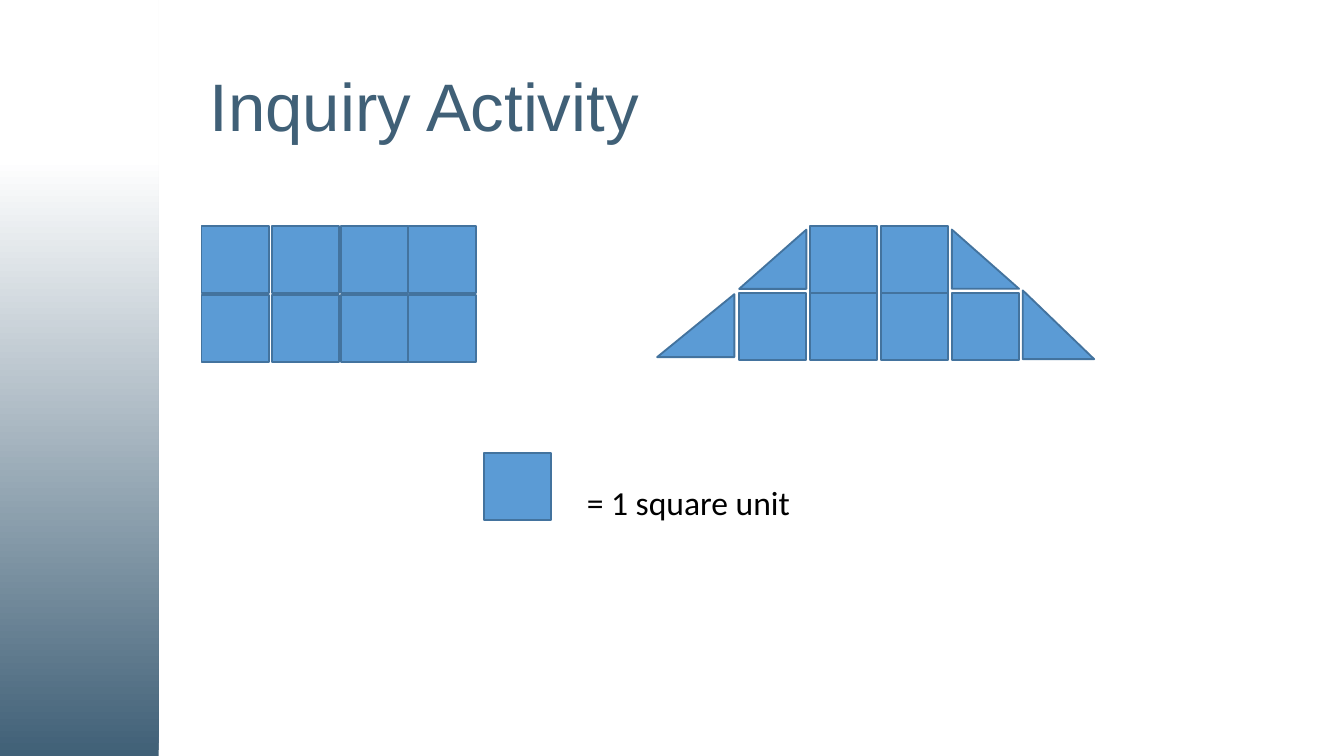
from pptx import Presentation
from pptx.dml.color import RGBColor
from pptx.enum.shapes import MSO_SHAPE
from pptx.enum.text import MSO_ANCHOR
from pptx.util import Cm, Pt

RECT = MSO_SHAPE.RECTANGLE
WEDGE = MSO_SHAPE.RIGHT_TRIANGLE
MIDDLE = MSO_ANCHOR.MIDDLE

COLORS = {
    "slate": "406077",
    "white": "FFFFFF",
    "blue": "5B9BD5",
    "edge": "43739E",
    "black": "000000",
}
UNIT = 1.27


def color(name):
    return RGBColor.from_string(COLORS[name])


def add_tile(slide, kind, left, top, width=UNIT, height=UNIT):
    tile = slide.shapes.add_shape(kind, Cm(left), Cm(top), Cm(width), Cm(height))
    tile.shadow.inherit = False
    tile.fill.solid()
    tile.fill.fore_color.rgb = color("blue")
    tile.line.color.rgb = color("edge")
    tile.line.width = Pt(1)
    return tile


def add_left_wedge(slide, left, top, width, height):
    """Fill the box with a triangle whose right angle is at bottom right."""
    shift = (width - height) / 2
    wedge = add_tile(slide, WEDGE, left + shift, top - shift, height, width)
    wedge.rotation = 270


def add_text(slide, text, box, font, size, ink):
    label = slide.shapes.add_textbox(*map(Cm, box))
    frame = label.text_frame
    frame.word_wrap = True
    frame.text = text
    face = frame.paragraphs[0].runs[0].font
    face.name = font
    face.size = Pt(size)
    face.color.rgb = color(ink)
    return frame


def add_band(slide, left, top, width, height):
    band = slide.shapes.add_shape(RECT, Cm(left), Cm(top), Cm(width), Cm(height))
    band.shadow.inherit = False
    band.line.fill.background()
    band.fill.gradient()
    band.fill.gradient_angle = 90
    stops = [("slate", 0), ("white", 0.79)]
    for stop, (name, place) in zip(band.fill.gradient_stops, stops):
        stop.color.rgb = color(name)
        stop.position = place


def add_title(slide, box):
    frame = add_text(slide, "Inquiry Activity", box, "Arial", 36, "slate")
    frame.vertical_anchor = MIDDLE
    frame.paragraphs[0].line_spacing = 0.9


def add_oblong(slide, left, top):
    for row in range(2):
        for col in (0, 1.33, 2.64, 3.91):
            add_tile(slide, RECT, left + col, top + row * 1.31)


def add_trapezoid(slide, left, top):
    step = 1.34
    base = left + 1.55
    for row, cols in enumerate([(1, 2), (0, 1, 2, 3)]):
        for col in cols:
            add_tile(slide, RECT, base + col * step, top + row * UNIT)
    add_left_wedge(slide, base, top + 0.07, UNIT, 1.12)
    add_left_wedge(slide, left, top + 1.29, 1.46, 1.19)
    add_tile(slide, WEDGE, base + 3 * step, top + 0.07, UNIT, 1.12)
    add_tile(slide, WEDGE, base + 4 * step, top + 1.22, 1.35, 1.3)


def add_key(slide, left, top):
    add_tile(slide, RECT, left, top)
    box = (left + 1.7, top + 0.43, 4.9, 1.02)
    add_text(slide, "= 1 square unit", box, "Calibri", 18, "black")


def main():
    deck = Presentation()
    deck.slide_width = Cm(25.4)
    deck.slide_height = Cm(14.29)
    slide = deck.slides.add_slide(deck.slide_layouts[6])
    add_band(slide, 0, 0, 3, 14.29)
    add_title(slide, (3.71, 0.76, 18.36, 2.62))
    add_oblong(slide, 3.81, 4.27)
    add_trapezoid(slide, 12.42, 4.27)
    add_key(slide, 9.14, 8.56)
    deck.save("out.pptx")


if __name__ == "__main__":
    main()
